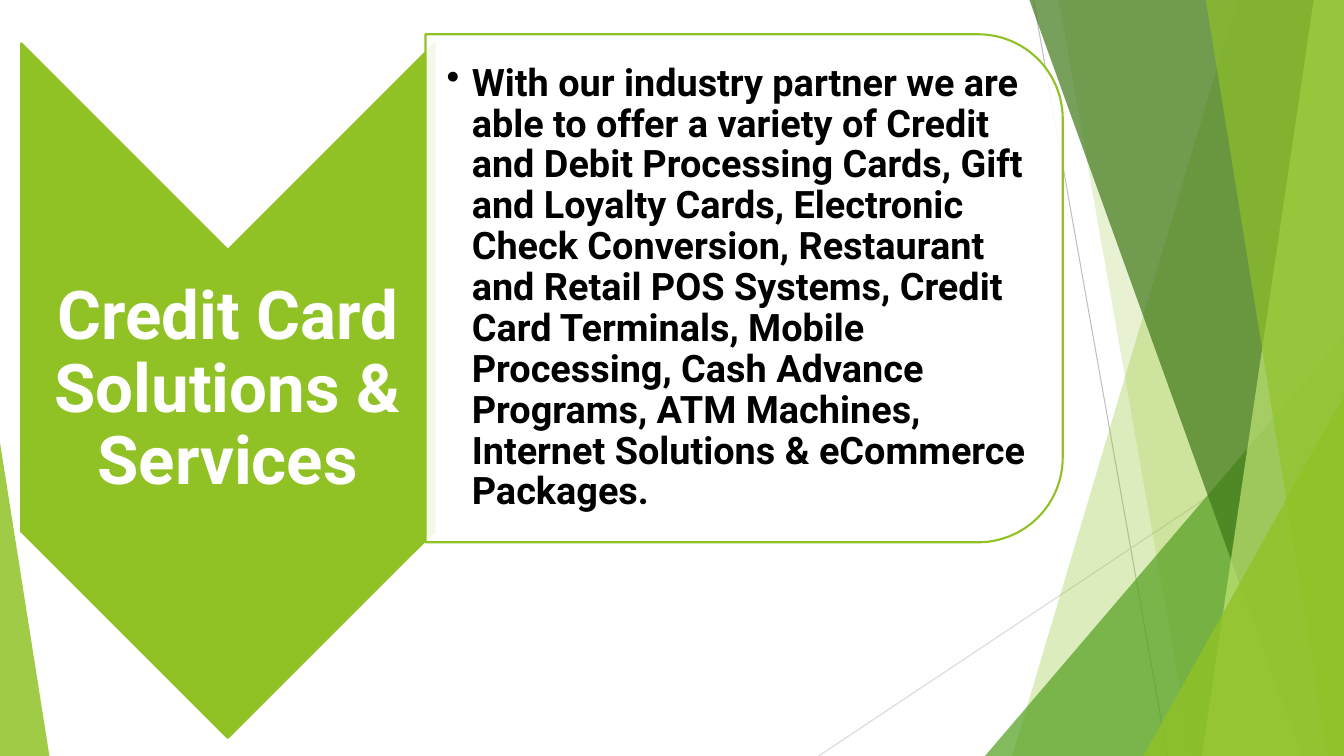
from lxml import etree
from pptx import Presentation
from pptx.dml.color import RGBColor
from pptx.enum.shapes import MSO_CONNECTOR, MSO_SHAPE
from pptx.enum.text import MSO_ANCHOR, MSO_AUTO_SIZE, PP_ALIGN
from pptx.oxml.ns import qn
from pptx.util import Inches, Pt

WHITE = RGBColor(0xFF, 0xFF, 0xFF)
BLACK = RGBColor(0x00, 0x00, 0x00)
LIME = RGBColor(0x90, 0xC2, 0x26)
PALE_LIME = RGBColor(0xC0, 0xE4, 0x74)
GREEN = RGBColor(0x54, 0xA0, 0x21)
DARK_GREEN = RGBColor(0x3F, 0x78, 0x19)
GRAY = RGBColor(0xBF, 0xBF, 0xBF)
LIGHT_GRAY = RGBColor(0xD9, 0xD9, 0xD9)

FONT = "Roboto"
WIDTH, HEIGHT = 13.33, 7.5
HEADING = "Credit Card Solutions & Services"
OFFER = (
    "With our industry partner we are able to offer a variety of Credit and Debit "
    "Processing Cards, Gift and Loyalty Cards, Electronic Check Conversion, Restaurant "
    "and Retail POS Systems, Credit Card Terminals, Mobile Processing, Cash Advance "
    "Programs, ATM Machines, Internet Solutions & eCommerce Packages."
)


def paint(shape, color, opacity=100, outline=None):
    shape.shadow.inherit = False
    shape.fill.solid()
    shape.fill.fore_color.rgb = color
    if opacity < 100:
        color_element = shape.element.spPr.find(qn("a:solidFill"))[0]
        etree.SubElement(color_element, qn("a:alpha"), val=str(opacity * 1000))
    if outline is None:
        shape.line.fill.background()
    else:
        shape.line.color.rgb = outline
        shape.line.width = Pt(1.5)


def add_thin_line(slide, start, end, color):
    points = [Inches(value) for value in (*start, *end)]
    line = slide.shapes.add_connector(MSO_CONNECTOR.STRAIGHT, *points)
    line.line.color.rgb = color
    line.line.width = Pt(0.75)
    etree.SubElement(line.element.spPr, qn("a:effectLst"))


def add_band(slide, top_left, bottom_left, color, opacity):
    builder = slide.shapes.build_freeform(Inches(top_left), 0, scale=1.0)
    corners = [(WIDTH, 0), (WIDTH, HEIGHT), (bottom_left, HEIGHT)]
    builder.add_line_segments([(Inches(x), Inches(y)) for x, y in corners])
    paint(builder.convert_to_shape(), color, opacity)


def add_corner(slide, left, top, width, apex, color, opacity):
    triangle = slide.shapes.add_shape(
        MSO_SHAPE.ISOSCELES_TRIANGLE,
        Inches(left), Inches(top), Inches(width), Inches(HEIGHT - top),
    )
    triangle.adjustments[0] = apex
    paint(triangle, color, opacity)


def add_backdrop(slide):
    add_thin_line(slide, (10.25, 0), (11.58, HEIGHT), GRAY)
    add_thin_line(slide, (WIDTH, 4.03), (8.12, HEIGHT), LIGHT_GRAY)
    add_band(slide, 12.27, 10.04, LIME, 30)
    add_band(slide, 10.5, 11.82, LIME, 20)
    add_corner(slide, 9.77, 3.33, 3.56, 1, GREEN, 72)
    add_band(slide, 10.21, 12.91, DARK_GREEN, 70)
    add_band(slide, 13.03, 11.92, PALE_LIME, 70)
    add_band(slide, 11.96, 13.17, LIME, 65)
    add_corner(slide, 11.34, 3.93, 1.99, 1, LIME, 80)
    add_corner(slide, 0, 4.39, 0.49, 0, LIME, 85)


def add_turned_shape(slide, kind, left, top, width, height):
    shape = slide.shapes.add_shape(
        kind,
        Inches(left + (width - height) / 2), Inches(top + (height - width) / 2),
        Inches(height), Inches(width),
    )
    shape.rotation = 90
    return shape


def write_text(shape, text, size, color, left_inset, inset):
    frame = shape.text_frame
    frame.word_wrap = True
    frame.auto_size = MSO_AUTO_SIZE.NONE
    frame.vertical_anchor = MSO_ANCHOR.MIDDLE
    frame.margin_left = Inches(left_inset)
    frame.margin_right = frame.margin_top = frame.margin_bottom = Inches(inset)
    paragraph = frame.paragraphs[0]
    paragraph.line_spacing = 0.9
    run = paragraph.add_run()
    run.text = text
    run.font.name = FONT
    run.font.size = Pt(size)
    run.font.bold = True
    run.font.color.rgb = color
    return paragraph


def add_heading_chevron(slide, left, top, width, height):
    chevron = add_turned_shape(slide, MSO_SHAPE.CHEVRON, left, top, width, height)
    paint(chevron, LIME, outline=LIME)
    title = slide.shapes.title
    title.left, title.top = Inches(left), Inches(top + width / 2)
    title.width, title.height = Inches(width), Inches(height - width)
    chevron.element.addnext(title.element)
    paragraph = write_text(title, HEADING, 48, WHITE, 0.03, 0.03)
    paragraph.alignment = PP_ALIGN.CENTER


def add_offer_card(slide, left, top, width, height):
    card = add_turned_shape(
        slide, MSO_SHAPE.ROUND_2_SAME_RECTANGLE, left, top, width, height
    )
    paint(card, WHITE, 90, LIME)
    margin = 0.25
    box = slide.shapes.add_textbox(
        Inches(left), Inches(top + margin),
        Inches(width - margin), Inches(height - 2 * margin),
    )
    paragraph = write_text(box, OFFER, 27, BLACK, 0.21, 0.02)
    paragraph.alignment = PP_ALIGN.LEFT
    properties = paragraph._p.get_or_add_pPr()
    properties.set("marL", str(Inches(0.25)))
    properties.set("indent", str(Inches(-0.25)))
    etree.SubElement(properties, qn("a:buChar"), char="•")


def main():
    presentation = Presentation()
    presentation.slide_width = Inches(WIDTH)
    presentation.slide_height = Inches(HEIGHT)
    slide = presentation.slides.add_slide(presentation.slide_layouts[5])
    add_backdrop(slide)
    add_heading_chevron(slide, 0.21, 0.43, 4.1, 6.89)
    add_offer_card(slide, 4.22, 0.34, 6.32, 5.04)
    presentation.save("out.pptx")


if __name__ == "__main__":
    main()
